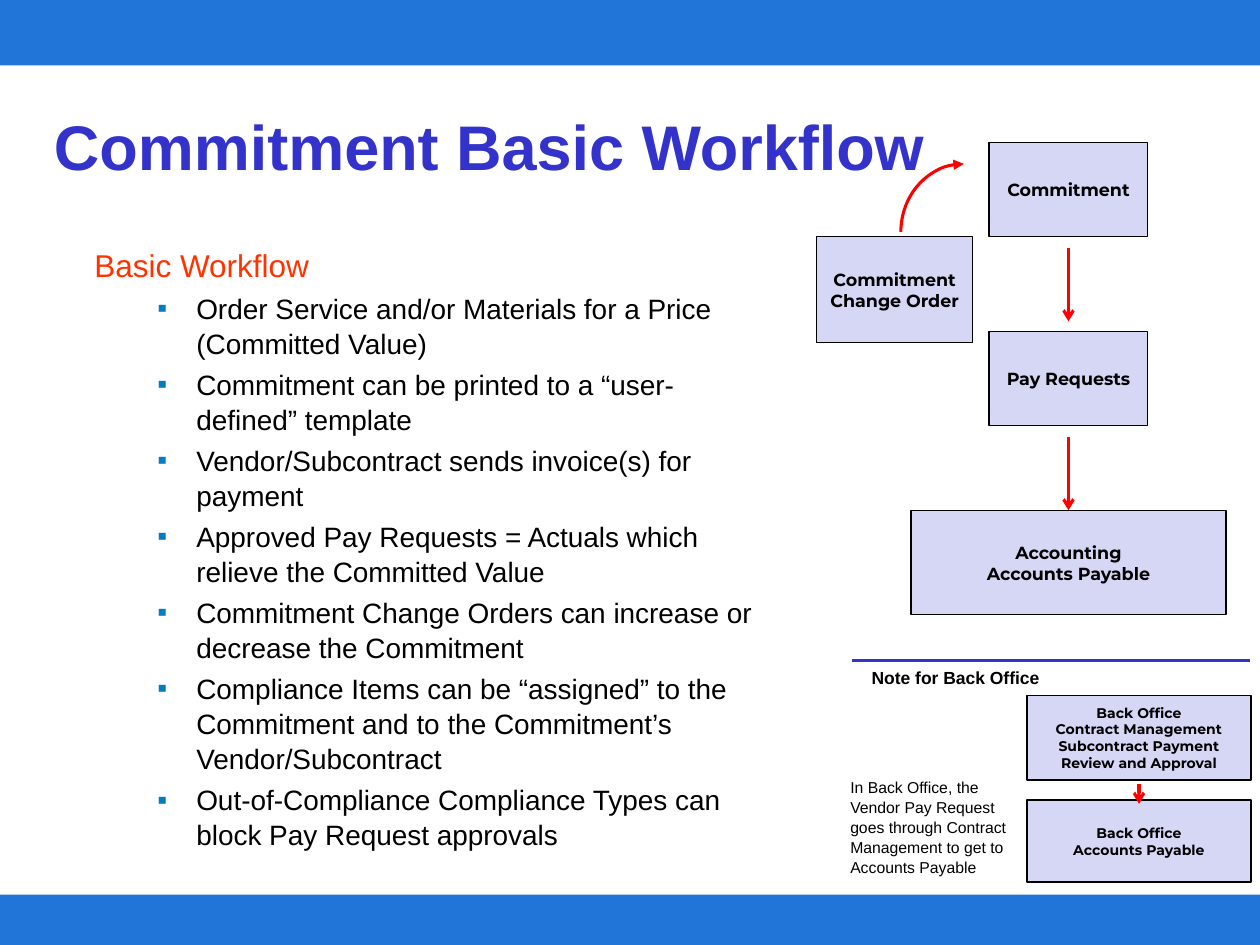
"""Build the commitment workflow slide."""
from dataclasses import dataclass

from lxml import etree
from pptx import Presentation
from pptx import util as u
from pptx.dml.color import RGBColor
from pptx.enum import shapes, text
from pptx.oxml.ns import qn

SLIDE_WIDTH, SLIDE_HEIGHT = u.Inches(10), u.Inches(7.5)
COLUMNS, ROWS = 100, 75
BLUE, INDIGO, LAVENDER, RED = "2175D9", "3333CC", "D6D6F5", "FF0000"
ORANGE, TEAL, BLACK = "FF3300", "007CC3", "000000"
ARROW_COLUMN = 84.8


@dataclass
class Area:
    column: float
    row: float
    columns: float
    rows: float

    def lengths(self) -> tuple:
        return across(self.column), down(self.row), across(self.columns), down(self.rows)


@dataclass
class Style:
    size: float
    color: str = BLACK
    bold: bool = False
    font: str = "Arial"


@dataclass
class Step:
    area: Area
    lines: list
    size: float = 10


@dataclass
class Link:
    start: tuple
    end: tuple
    color: str = RED
    width: float = 1.75
    head: str = "arrow"


@dataclass
class Label:
    area: Area
    words: str
    style: Style
    anchor: text.MSO_ANCHOR = text.MSO_ANCHOR.TOP


BANDS = [Area(0, 71, COLUMNS, 4), Area(0, 0, COLUMNS, 5.2)]
STEPS = [
    Step(Area(81.5, 55.2, 17.8, 6.7),
         ["Back Office", "Contract Management", "Subcontract Payment Review and Approval"], 8),
    Step(Area(81.5, 63.5, 17.8, 6.5), ["Back Office", "Accounts Payable"], 8),
    Step(Area(64.8, 18.8, 12.4, 8.4), ["Commitment Change Order"]),
    Step(Area(78.5, 11.3, 12.6, 7.5), ["Commitment"]),
    Step(Area(78.5, 26.3, 12.6, 7.5), ["Pay Requests"]),
    Step(Area(72.3, 40.5, 25, 8.3), ["Accounting", "Accounts Payable"]),
]
LINKS = [
    Link((90.4, 62.2), (90.4, 63.8)),
    Link((ARROW_COLUMN, 19.7), (ARROW_COLUMN, 25.5)),
    Link((ARROW_COLUMN, 34.7), (ARROW_COLUMN, 40.5)),
    Link((67.6, 52.4), (99.2, 52.4), INDIGO, 1.5, ""),
]
LABELS = [
    Label(Area(3.3, 7.5, 89, 7.7), "Commitment Basic Workflow",
          Style(36, INDIGO, True), text.MSO_ANCHOR.MIDDLE),
    Label(Area(66.5, 61.2, 15, 8.6),
          "In Back Office, the Vendor Pay Request goes through Contract Management "
          "to get to Accounts Payable", Style(9)),
    Label(Area(68.2, 52.4, 31, 2.7), "Note for Back Office", Style(10, bold=True)),
]
BULLETS = [
    "Order Service and/or Materials for a Price (Committed Value)",
    "Commitment can be printed to a “user-defined” template",
    "Vendor/Subcontract sends invoice(s) for payment",
    "Approved Pay Requests = Actuals which relieve the Committed Value",
    "Commitment Change Orders can increase or decrease the Commitment",
    "Compliance Items can be “assigned” to the Commitment and to the Commitment’s "
    "Vendor/Subcontract",
    "Out-of-Compliance Compliance Types can block Pay Request approvals",
]


def across(columns: float) -> int:
    return round(SLIDE_WIDTH * columns / COLUMNS)


def down(rows: float) -> int:
    return round(SLIDE_HEIGHT * rows / ROWS)


def rgb(value: str) -> RGBColor:
    return RGBColor.from_string(value)


def format_paragraph(paragraph, style: Style) -> None:
    for run in paragraph.runs:
        run.font.name, run.font.size = style.font, u.Pt(style.size)
        run.font.bold, run.font.color.rgb = style.bold, rgb(style.color)


def add_band(slide, area: Area) -> None:
    shape = slide.shapes.add_shape(shapes.MSO_SHAPE.RECTANGLE, *area.lengths())
    shape.shadow.inherit = False
    shape.fill.solid()
    shape.fill.fore_color.rgb = rgb(BLUE)
    shape.line.fill.background()


def add_step(slide, step: Step) -> None:
    shape = slide.shapes.add_shape(shapes.MSO_SHAPE.RECTANGLE, *step.area.lengths())
    shape.shadow.inherit = False
    shape.fill.solid()
    shape.fill.fore_color.rgb = rgb(LAVENDER)
    shape.line.color.rgb, shape.line.width = rgb(BLACK), u.Pt(0.75)
    frame = shape.text_frame
    frame.word_wrap, frame.vertical_anchor = True, text.MSO_ANCHOR.MIDDLE
    frame.text = "\n".join(step.lines)
    for paragraph in frame.paragraphs:
        paragraph.alignment = text.PP_ALIGN.CENTER
        format_paragraph(paragraph, Style(step.size, bold=True, font="Montserrat"))


def style_line(shape, color: str, width: float, head: str) -> None:
    shape.line.color.rgb, shape.line.width = rgb(color), u.Pt(width)
    if head:
        outline = shape.line._get_or_add_ln()
        etree.SubElement(outline, qn("a:tailEnd"), type=head)


def add_link(slide, link: Link) -> None:
    (left, top), (right, bottom) = link.start, link.end
    connector = slide.shapes.add_connector(
        shapes.MSO_CONNECTOR.STRAIGHT, across(left), down(top), across(right), down(bottom))
    style_line(connector, link.color, link.width, link.head)
    etree.SubElement(connector._element.spPr, qn("a:effectLst"))


def add_return_arc(slide, area: Area) -> None:
    arc = slide.shapes.add_shape(shapes.MSO_SHAPE.ARC, *area.lengths())
    arc.rotation = 270
    arc.fill.background()
    style_line(arc, RED, 1.75, "triangle")
    arc.shadow.inherit = False


def add_label(slide, label: Label):
    frame = slide.shapes.add_textbox(*label.area.lengths()).text_frame
    frame.word_wrap, frame.vertical_anchor = True, label.anchor
    frame.text = label.words
    frame.paragraphs[0].line_spacing = 1.05
    format_paragraph(frame.paragraphs[0], label.style)
    return frame


def add_bullet(frame, words: str) -> None:
    paragraph = frame.add_paragraph()
    paragraph.text, paragraph.level = words, 1
    paragraph.line_spacing, paragraph.space_before = 1.05, u.Pt(3.2)
    properties = paragraph._p.get_or_add_pPr()
    properties.set("marL", str(u.Inches(0.81)))
    properties.set("indent", str(u.Inches(-0.31)))
    color = etree.SubElement(properties, qn("a:buClr"))
    etree.SubElement(color, qn("a:srgbClr"), val=TEAL)
    etree.SubElement(properties, qn("a:buFont"), typeface="Arial")
    etree.SubElement(properties, qn("a:buChar"), char="▪")
    format_paragraph(paragraph, Style(16))


def main() -> None:
    presentation = Presentation()
    presentation.slide_width, presentation.slide_height = SLIDE_WIDTH, SLIDE_HEIGHT
    slide = presentation.slides.add_slide(presentation.slide_layouts[6])
    for area in BANDS:
        add_band(slide, area)
    for label in LABELS:
        add_label(slide, label)
    body = add_label(slide, Label(Area(6.5, 18.9, 55.1, 47.8), "Basic Workflow",
                                  Style(18, ORANGE)))
    for words in BULLETS:
        add_bullet(body, words)
    for step in STEPS:
        add_step(slide, step)
    for link in LINKS:
        add_link(slide, link)
    add_return_arc(slide, Area(71.1, 13.4, 10.8, 10))
    presentation.save("out.pptx")


if __name__ == "__main__":
    main()
